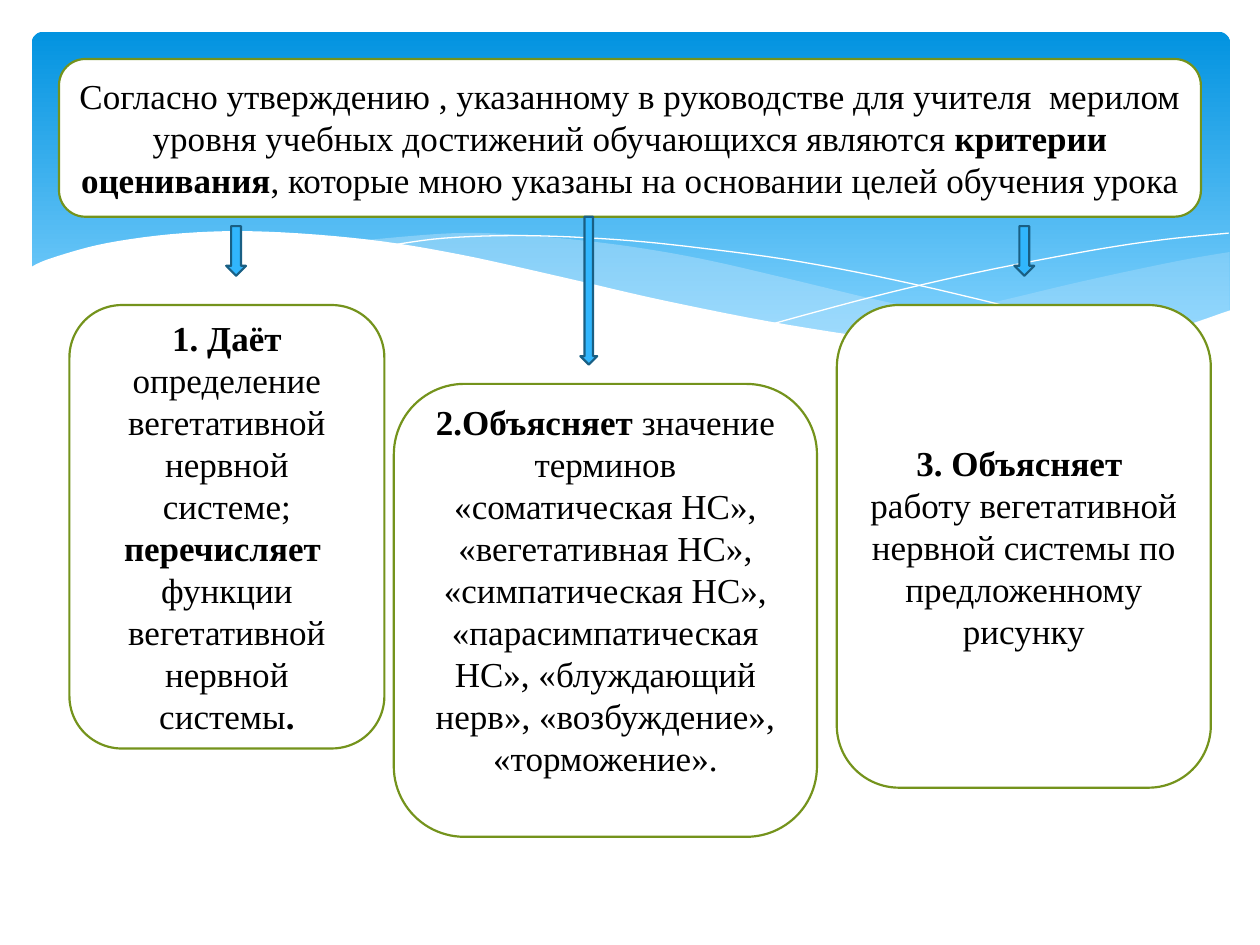
import dataclasses
import typing

import lxml.etree
import pptx
import pptx.dml.color
import pptx.enum.shapes
import pptx.enum.text
import pptx.oxml.ns
import pptx.util

Cm = pptx.util.Cm
Pt = pptx.util.Pt
MSO_SHAPE = pptx.enum.shapes.MSO_SHAPE
Point = tuple[float, float]


@dataclasses.dataclass(frozen=True)
class Theme:
    white: str = "FFFFFF"
    ink: str = "000000"
    sky_top: str = "0293E0"
    sky_bottom: str = "83D3FE"
    haze: str = "C6E7FC"
    card_border: str = "74931C"
    arrow: str = "31B6FD"
    arrow_border: str = "195F84"
    font: str = "Times New Roman"
    text_size: float = 20
    border_width: float = 1.25


THEME = Theme()


class Box(typing.NamedTuple):
    left: float
    top: float
    width: float
    height: float

    def lengths(self) -> list[int]:
        return [Cm(value) for value in self]


class Phrase(typing.NamedTuple):
    text: str
    bold: bool = False


@dataclasses.dataclass(frozen=True)
class Card:
    box: Box
    phrases: list[Phrase]
    bottom_inset: float = 0.13


@dataclasses.dataclass(frozen=True)
class Wave:
    edges: list[list[Point]]
    opacity: int = 100
    fill: str | None = None


SKY = Box(0.64, 0.64, 24.16, 6.86)

WAVES = [
    Wave([[(24.79, 5.08), (23.75, 5.26), (21.87, 5.66), (19.79, 6.15), (17.93, 6.53), (16.79, 6.73)],
          [(16.79, 6.73), (18.26, 6.91), (19.84, 7.04), (20.93, 7.06), (22.38, 6.93), (23.57, 6.68),
           (24.79, 6.27)]], 29, THEME.haze),
    Wave([[(22.68, 6.93), (20.5, 6.6), (17.93, 6.1), (15.98, 5.64), (14.1, 5.21), (12.42, 4.93),
           (10.67, 4.75), (9.17, 4.7), (7.26, 4.85)],
          [(7.26, 4.85), (9.19, 5.16), (11.4, 5.64), (13.46, 6.1), (15.7, 6.55), (17.65, 6.86),
           (19.63, 7.04), (21.03, 7.06), (22.68, 6.93)]], 40, THEME.haze),
    Wave([[(7.85, 4.95), (8.97, 4.8), (10.57, 4.75), (12.42, 4.83), (14.12, 5), (16.15, 5.28),
           (18.47, 5.74), (21.11, 6.38), (23.04, 6.91)]]),
    Wave([[(15.57, 6.53), (17.65, 5.97), (19.71, 5.49), (22, 5.05), (23.47, 4.83), (24.77, 4.7)]]),
    Wave([[(24.82, 6.25), (23.11, 6.78), (20.9, 7.04), (18.44, 6.91), (15.9, 6.55), (13.44, 6.07),
           (11.35, 5.59), (9.27, 5.13), (7.42, 4.83), (5.36, 4.67), (3.71, 4.7), (2.16, 4.9),
           (1.02, 5.21), (0.58, 5.41)],
          [(0.58, 8.36), (24.82, 8.36)]], 100, THEME.white),
]

CARDS = [
    Card(Box(1.19, 1.19, 23.02, 3.18), [
        Phrase("Согласно утверждению , указанному в руководстве для учителя  мерилом "
               "уровня учебных достижений обучающихся являются "),
        Phrase("критерии оценивания", True),
        Phrase(", которые мною указаны на основании целей обучения урока "),
    ]),
    Card(Box(1.4, 6.15, 6.35, 8.94), [
        Phrase("1. Даёт ", True),
        Phrase("определение вегетативной нервной системе; "),
        Phrase("перечисляет  ", True),
        Phrase("функции вегетативной нервной системы"),
        Phrase(".", True),
    ]),
    Card(Box(16.87, 6.15, 7.54, 9.73), [
        Phrase("3. Объясняет  ", True),
        Phrase("работу вегетативной нервной системы по предложенному рисунку"),
    ]),
    Card(Box(7.94, 7.74, 8.53, 9.13), [
        Phrase("2.Объясняет ", True),
        Phrase("значение терминов «соматическая НС», «вегетативная НС», "
               "«симпатическая НС», «парасимпатическая НС», «блуждающий нерв», "
               "«возбуждение», «торможение»."),
    ], bottom_inset=0.97),
]

ARROWS = [Box(20.45, 4.56, 0.4, 1), Box(11.7, 4.37, 0.34, 2.98), Box(4.56, 4.56, 0.4, 1)]


def color(code: str) -> pptx.dml.color.RGBColor:
    return pptx.dml.color.RGBColor.from_string(code)


def smooth(knots: list[Point], steps: int = 6) -> list[Point]:
    if len(knots) < 3:
        return knots
    padded = [knots[0], *knots, knots[-1]]
    curve = [knots[0]]
    for a, b, c, d in zip(padded, padded[1:], padded[2:], padded[3:]):
        for step in range(1, steps + 1):
            t = step / steps
            curve.append(tuple(
                (2 * q + (r - p) * t + (2 * p - 5 * q + 4 * r - s) * t ** 2
                 + (3 * q - p - 3 * r + s) * t ** 3) / 2
                for p, q, r, s in zip(a, b, c, d)))
    return curve


def paint(shape, fill: str | None, border: str | None, width: float = THEME.border_width) -> None:
    shape.shadow.inherit = False
    if fill:
        shape.fill.solid()
        shape.fill.fore_color.rgb = color(fill)
    else:
        shape.fill.background()
    if border:
        shape.line.color.rgb = color(border)
        shape.line.width = Pt(width)
    else:
        shape.line.fill.background()


def write(paragraph, text: str, *, bold: bool = False, size: float = THEME.text_size,
          ink: str = THEME.ink, font: str = THEME.font) -> None:
    run = paragraph.add_run()
    run.text = text
    run.font.name = font
    run.font.size = Pt(size)
    run.font.bold = bold
    run.font.color.rgb = color(ink)


def draw_sky(slide) -> None:
    sky = slide.shapes.add_shape(MSO_SHAPE.ROUNDED_RECTANGLE, *SKY.lengths())
    sky.adjustments[0] = 0.034
    paint(sky, None, None)
    sky.fill.gradient()
    sky.fill.gradient_angle = 270
    shades = [(0, THEME.sky_top), (0.9, THEME.sky_bottom)]
    for stop, (position, shade) in zip(sky.fill.gradient_stops, shades):
        stop.position = position
        stop.color.rgb = color(shade)


def draw_wave(slide, wave: Wave) -> None:
    outline = [(Cm(x), Cm(y)) for edge in wave.edges for x, y in smooth(edge)]
    builder = slide.shapes.build_freeform(*outline[0])
    builder.add_line_segments(outline[1:], close=wave.fill is not None)
    surface = builder.convert_to_shape()
    paint(surface, wave.fill, None if wave.fill else THEME.white, 0)
    if wave.opacity < 100:
        tint = surface._element.spPr.find(".//" + pptx.oxml.ns.qn("a:srgbClr"))
        lxml.etree.SubElement(tint, pptx.oxml.ns.qn("a:alpha"), val=str(wave.opacity * 1000))


def draw_card(slide, card: Card) -> None:
    panel = slide.shapes.add_shape(MSO_SHAPE.ROUNDED_RECTANGLE, *card.box.lengths())
    paint(panel, THEME.white, THEME.card_border)
    frame = panel.text_frame
    frame.word_wrap = True
    frame.vertical_anchor = pptx.enum.text.MSO_ANCHOR.MIDDLE
    frame.margin_bottom = Cm(card.bottom_inset)
    paragraph = frame.paragraphs[0]
    paragraph.alignment = pptx.enum.text.PP_ALIGN.CENTER
    for phrase in card.phrases:
        write(paragraph, phrase.text, bold=phrase.bold)


def draw_arrow(slide, box: Box) -> None:
    arrow = slide.shapes.add_shape(MSO_SHAPE.DOWN_ARROW, *box.lengths())
    paint(arrow, THEME.arrow, THEME.arrow_border)


def main() -> None:
    deck = pptx.Presentation()
    deck.slide_width, deck.slide_height = Cm(25.4), Cm(19.05)
    slide = deck.slides.add_slide(deck.slide_layouts[6])
    draw_sky(slide)
    for wave in WAVES:
        draw_wave(slide, wave)
    for card in CARDS:
        draw_card(slide, card)
    for box in ARROWS:
        draw_arrow(slide, box)
    deck.save("out.pptx")


if __name__ == "__main__":
    main()
